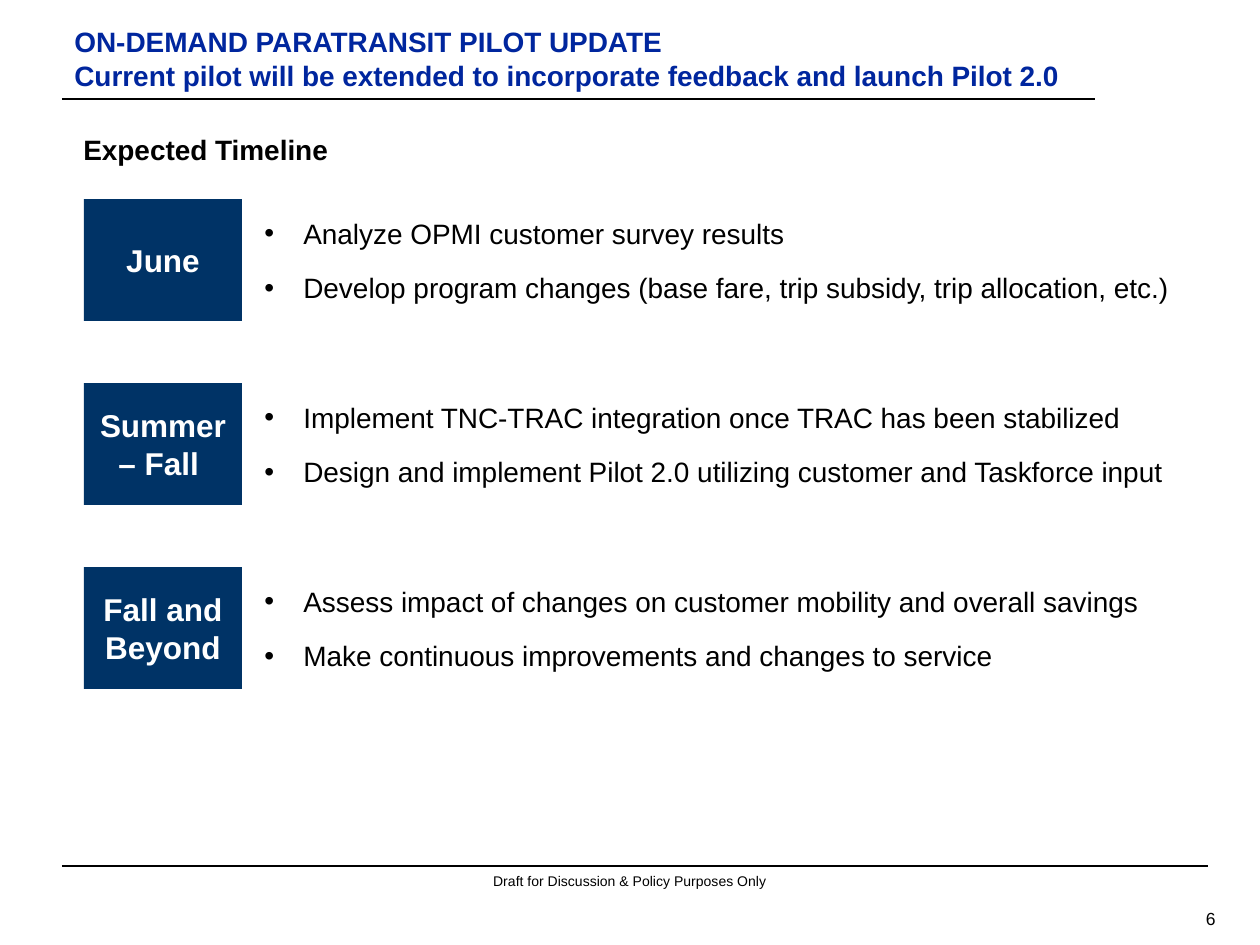
from lxml.etree import SubElement
from pptx import Presentation
from pptx.dml.color import RGBColor
from pptx.enum.shapes import MSO_CONNECTOR, MSO_SHAPE
from pptx.enum.text import MSO_ANCHOR, PP_ALIGN
from pptx.oxml.ns import qn
from pptx.util import Pt

EMU_PER_PX = 914400 / 126
COLORS = {"title": "00269E", "period": "003366", "text": "000000", "light": "FFFFFF"}
PERIODS = [
    ("June", [
        "Analyze OPMI customer survey results",
        "Develop program changes (base fare, trip subsidy, trip allocation, etc.)",
    ]),
    ("Summer – Fall ", [
        "Implement TNC-TRAC integration once TRAC has been stabilized",
        "Design and implement Pilot 2.0 utilizing customer and Taskforce input",
    ]),
    ("Fall and Beyond", [
        "Assess impact of changes on customer mobility and overall savings",
        "Make continuous improvements and changes to service",
    ]),
]


def px(length):
    return round(length * EMU_PER_PX)


def rgb(name):
    return RGBColor.from_string(COLORS[name])


class TimelinePage:
    """Draws the elements of a timeline page in one shared style."""

    font = "Arial"

    def __init__(self, deck):
        self.page = deck.slides.add_slide(deck.slide_layouts[6])

    def add_text(self, para, text, size, color="text", bold=False):
        for index, line in enumerate(text.split("\n")):
            if index:
                para.add_line_break()
            span = para.add_run()
            span.text = line
            span.font.name = self.font
            span.font.size = Pt(size)
            span.font.bold = bold
            span.font.color.rgb = rgb(color)

    def textbox(self, area, shapes=None, anchor=MSO_ANCHOR.TOP):
        shapes = shapes or self.page.shapes
        box = shapes.add_textbox(*map(px, area))
        box.text_frame.word_wrap = True
        box.text_frame.vertical_anchor = anchor
        return box.text_frame

    def label(self, area, text, size, color="text", bold=False,
              align=PP_ALIGN.LEFT, anchor=MSO_ANCHOR.TOP, indent=0):
        para = self.textbox(area, anchor=anchor).paragraphs[0]
        para.alignment = align
        if indent:
            para._p.get_or_add_pPr().set("marL", str(px(indent)))
        self.add_text(para, text, size, color, bold)

    def rule(self, left, right, y, width):
        line = self.page.shapes.add_connector(
            MSO_CONNECTOR.STRAIGHT, px(left), px(y), px(right), px(y))
        line.line.color.rgb = rgb("text")
        line.line.width = Pt(width)
        SubElement(line._element.spPr, qn("a:effectLst"))

    def period_block(self, shapes, area, text):
        block = shapes.add_shape(MSO_SHAPE.RECTANGLE, *map(px, area))
        block.shadow.inherit = False
        block.fill.solid()
        block.fill.fore_color.rgb = rgb("period")
        block.line.fill.background()
        block.text_frame.word_wrap = True
        block.text_frame.vertical_anchor = MSO_ANCHOR.MIDDLE
        para = block.text_frame.paragraphs[0]
        para.alignment = PP_ALIGN.CENTER
        self.add_text(para, text, 18, "light", True)

    def bullets(self, shapes, area, items):
        frame = self.textbox(area, shapes)
        for index, item in enumerate(items):
            para = frame.add_paragraph() if index else frame.paragraphs[0]
            props = para._p.get_or_add_pPr()
            props.set("marL", str(px(49)))
            props.set("indent", str(px(-39)))
            SubElement(props, qn("a:buFont"), typeface=self.font)
            SubElement(props, qn("a:buChar"), char="•")
            para.space_before = Pt(6 if index else 0)
            para.space_after = Pt(6)
            self.add_text(para, item, 16)

    def period(self, top, name, items):
        shapes = self.page.shapes.add_group_shape().shapes
        self.period_block(shapes, (84, top, 158, 122), name)
        self.bullets(shapes, (242, top + 11, 969, 102), items)


def main():
    deck = Presentation()
    deck.slide_width, deck.slide_height = px(1260), px(945)
    page = TimelinePage(deck)
    page.rule(62, 1208, 866, 0.75)
    page.label((1123, 902, 105, 32), "6", 10,
               align=PP_ALIGN.RIGHT, anchor=MSO_ANCHOR.MIDDLE)
    page.label((450, 866, 360, 30), "Draft for Discussion & Policy Purposes Only", 8,
               align=PP_ALIGN.CENTER)
    page.rule(62, 1095, 99, 1)
    page.label((62, 34, 1068, 64),
               "ON-DEMAND PARATRANSIT PILOT UPDATE\n"
               "Current pilot will be extended to incorporate feedback and launch Pilot 2.0",
               16, "title", True, anchor=MSO_ANCHOR.BOTTOM)
    page.label((62, 126, 1145, 47), "Expected Timeline", 16, bold=True, indent=9)
    for index, (name, items) in enumerate(PERIODS):
        page.period(199 + 184 * index, name, items)
    deck.save("out.pptx")


if __name__ == "__main__":
    main()
